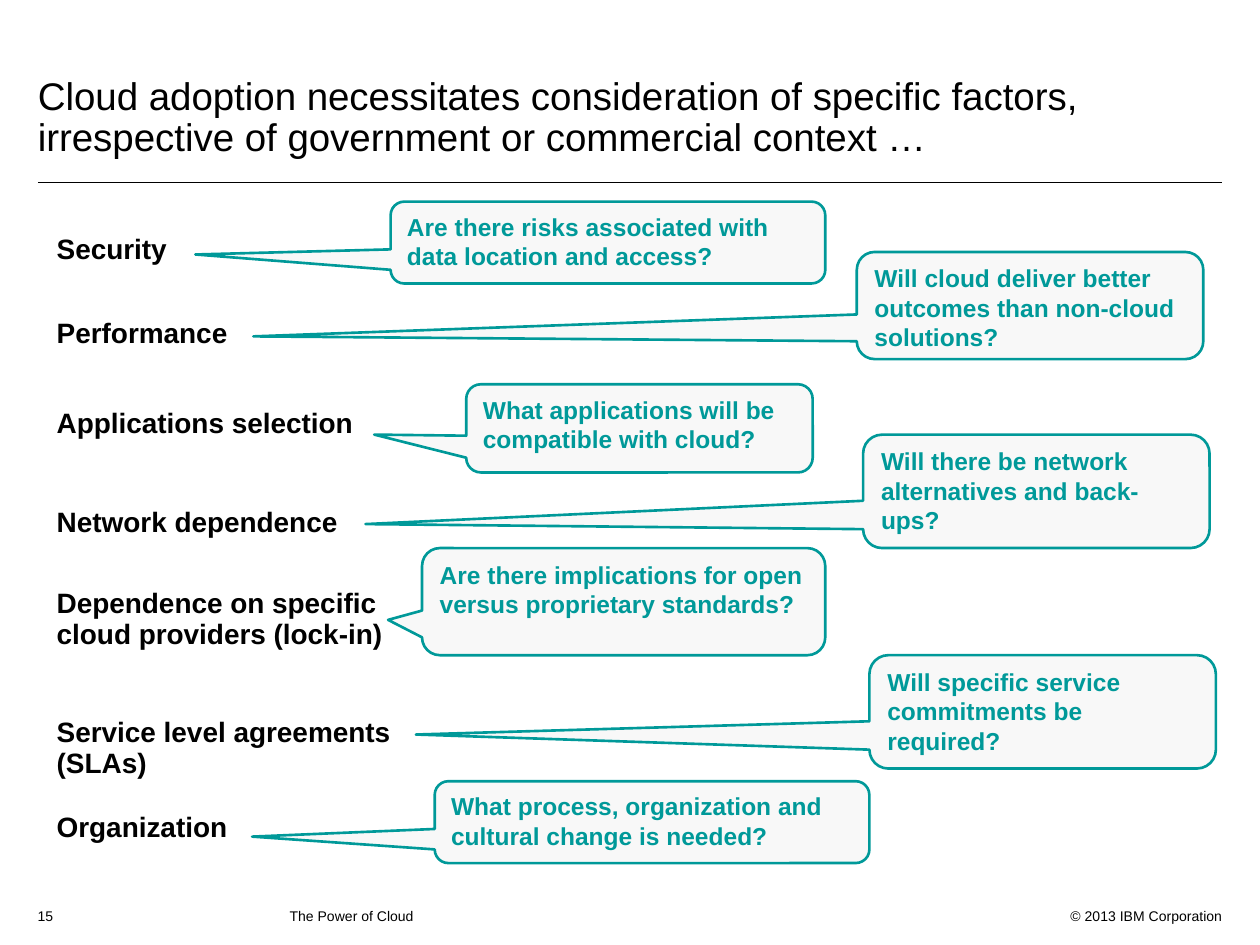
from dataclasses import dataclass

from pptx import Presentation
from pptx.dml.color import RGBColor
from pptx.enum.shapes import MSO_CONNECTOR, MSO_SHAPE
from pptx.enum.text import MSO_ANCHOR, MSO_AUTO_SIZE, PP_ALIGN
from pptx.oxml.ns import qn
from pptx.util import Emu, Pt

SCALE = 9144  # EMU per px, 100 px to the inch
FONT = "Arial"
COLORS = {"ink": "000000", "teal": "009999", "pale": "F8F8F8"}
PLAIN = "{2D5ABB26-0587-4C30-8999-92F81FD0307C}"  # no style, no grid


@dataclass
class Box:
    x: int
    y: int
    w: int
    h: int


@dataclass
class Callout:
    text: str
    box: Box
    tip: tuple[int, int]


@dataclass
class Note:
    text: str
    box: Box
    align: PP_ALIGN = PP_ALIGN.LEFT


@dataclass
class Grid:
    x: int
    y: int
    w: int
    rows: list[int]
    labels: dict[int, str]


TITLE = Note(
    "Cloud adoption necessitates consideration of specific factors, "
    "irrespective of government or commercial context …",
    Box(20, 56, 950, 89),
)
NOTES = [
    Note("© 2013 IBM Corporation", Box(830, 715, 150, 20), PP_ALIGN.RIGHT),
    Note("15", Box(20, 715, 40, 20)),
    Note("\tThe Power of Cloud", Box(170, 715, 650, 20)),
]
ODD = Grid(35, 181, 300, [69, 69, 74, 69, 88, 90, 69], {
    0: "Security",
    2: "Applications selection",
    4: "Dependence on specific cloud providers (lock-in)",
    6: "Organization",
})
EVEN = Grid(35, 175, 305, [73, 73, 77, 73, 93, 94, 73], {
    1: "Performance",
    3: "Network dependence",
    5: "Service level agreements (SLAs)",
})
CALLOUTS = [
    Callout("Are there risks associated with data location and access?",
            Box(310, 160, 345, 65), (155, 202)),
    Callout("Will cloud deliver better outcomes than non-cloud solutions?",
            Box(680, 200, 275, 85), (201, 267)),
    Callout("What applications will be compatible with cloud?",
            Box(370, 305, 275, 70), (297, 345)),
    Callout("What process, organization and cultural change is needed?",
            Box(345, 620, 345, 65), (200, 664)),
    Callout("Will specific service commitments be required?",
            Box(690, 520, 275, 90), (330, 583)),
    Callout("Are there implications for open versus proprietary standards?",
            Box(335, 435, 320, 85), (308, 492)),
    Callout("Will there be network alternatives and back-ups?",
            Box(685, 345, 275, 90), (290, 416)),
]


def px(n: int) -> Emu:
    return Emu(n * SCALE)


def place(box: Box) -> tuple[Emu, ...]:
    return px(box.x), px(box.y), px(box.w), px(box.h)


def color(name: str) -> RGBColor:
    return RGBColor.from_string(COLORS[name])


def write(frame, text: str, size: int, ink: str = "ink", bold: bool = False,
          align: PP_ALIGN = PP_ALIGN.LEFT):
    """Fill the first paragraph of a text frame and return it."""
    frame.word_wrap = True
    frame.vertical_anchor = MSO_ANCHOR.TOP
    para = frame.paragraphs[0]
    para.alignment = align
    run = para.add_run()
    run.text = text
    font = run.font
    font.name, font.size, font.bold = FONT, Pt(size), bold
    font.color.rgb = color(ink)
    return para


def add_title(slide, note: Note) -> None:
    title = slide.shapes.title
    title.left, title.top, title.width, title.height = place(note.box)
    title.text_frame.auto_size = MSO_AUTO_SIZE.NONE
    write(title.text_frame, note.text, 22).line_spacing = 0.9


def add_rule(slide, left: int, right: int, y: int) -> None:
    rule = slide.shapes.add_connector(
        MSO_CONNECTOR.STRAIGHT, px(left), px(y), px(right), px(y))
    rule.line.color.rgb = color("ink")
    rule.line.width = Pt(0.75)
    props = rule.element.spPr
    props.append(props.makeelement(qn("a:effectLst"), {}))


def add_note(slide, note: Note) -> None:
    shape = slide.shapes.add_textbox(*place(note.box))
    write(shape.text_frame, note.text, 8, align=note.align)


def add_grid(slide, grid: Grid) -> None:
    box = Box(grid.x, grid.y, grid.w, sum(grid.rows))
    table = slide.shapes.add_table(len(grid.rows), 1, *place(box)).table
    table.first_row = table.horz_banding = False
    table._tbl.tblPr.find(qn("a:tableStyleId")).text = PLAIN
    for i, height in enumerate(grid.rows):
        table.rows[i].height = px(height)
        cell = table.cell(i, 0)
        cell.fill.background()
        if i in grid.labels:
            para = write(cell.text_frame, grid.labels[i], 16, bold=True)
            para.space_after = Pt(3)


def add_callout(slide, item: Callout) -> None:
    box = item.box
    shape = slide.shapes.add_shape(
        MSO_SHAPE.ROUNDED_RECTANGULAR_CALLOUT, *place(box))
    shape.shadow.inherit = False
    # The tip is set as an offset from the centre, in shares of the size.
    shape.adjustments[0] = (item.tip[0] - box.x) / box.w - 0.5
    shape.adjustments[1] = (item.tip[1] - box.y) / box.h - 0.5
    shape.fill.solid()
    shape.fill.fore_color.rgb = color("pale")
    shape.line.color.rgb = color("teal")
    shape.line.width = Pt(1.5)
    write(shape.text_frame, item.text, 14, "teal", bold=True)


def main() -> None:
    deck = Presentation()
    deck.slide_width, deck.slide_height = px(1000), px(750)
    slide = deck.slides.add_slide(deck.slide_layouts.get_by_name("Title Only"))
    add_rule(slide, 30, 970, 145)
    for note in NOTES:
        add_note(slide, note)
    add_title(slide, TITLE)
    add_grid(slide, ODD)
    for item in CALLOUTS:
        add_callout(slide, item)
    add_grid(slide, EVEN)
    deck.save("out.pptx")


if __name__ == "__main__":
    main()
